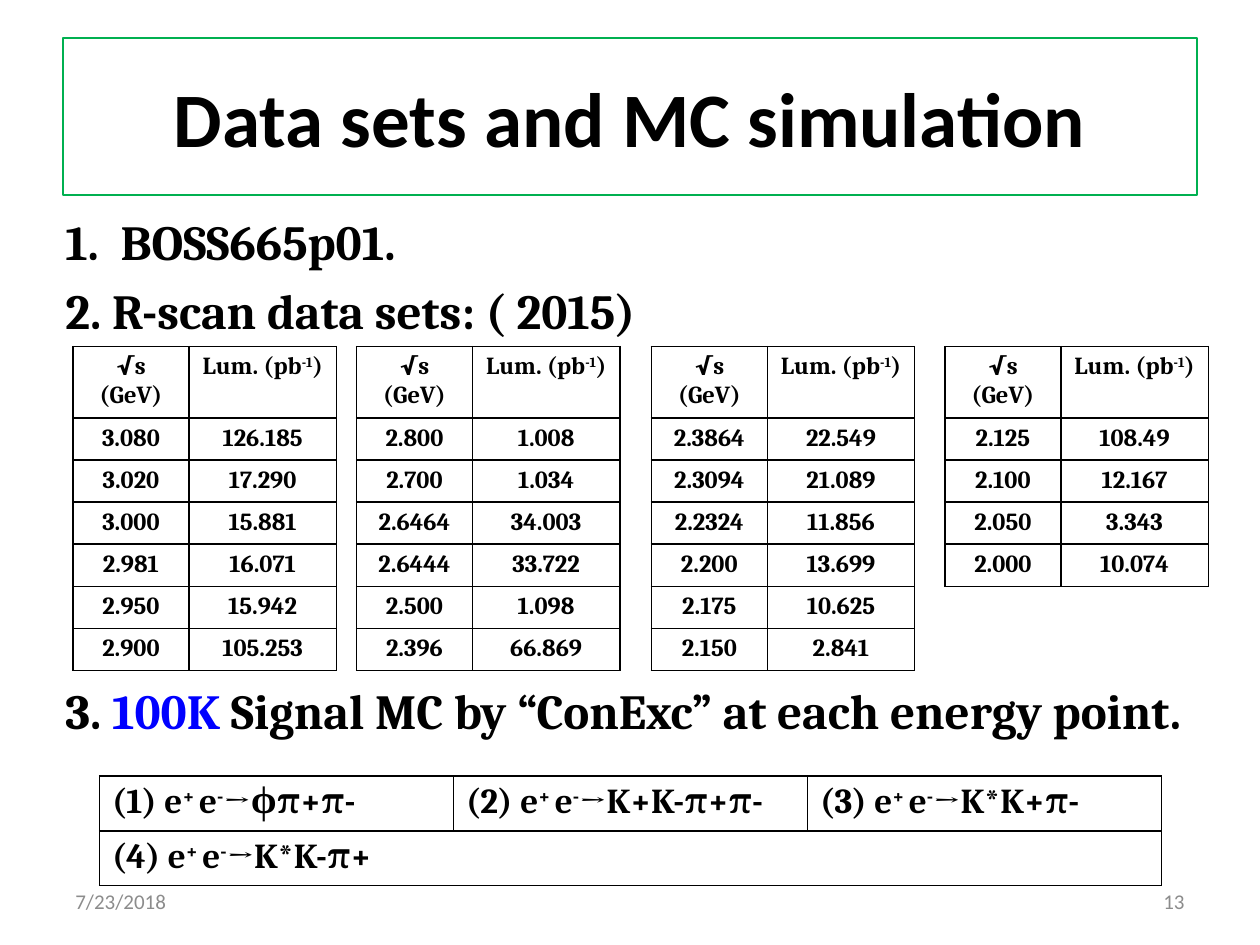
from lxml import etree
from pptx import Presentation, util as u
from pptx.dml.color import RGBColor
from pptx.enum import shapes, text
from pptx.oxml.ns import qn

HUES = {"ink": "000000", "edge": "00B050", "blue": "0000FF", "gray": "8C8C8C"}
TITLE = "Data sets and MC simulation"
POINTS = [
    (5.6, [("1.  BOSS665p01.", "ink")]),
    (5.6, [("2. R-scan data sets: ( 2015)", "ink")]),
    (195, [("3. ", "ink"), ("100K", "blue"),
           (" Signal MC by “ConExc” at each energy point.", "ink")]),
]
HEADS = [[("√s (GeV)", 0)], [("Lum. (pb", 0), ("-1", 30), (")", 0)]]
SCANS = [
    (0.58, [("3.080", "126.185"), ("3.020", "17.290"), ("3.000", "15.881"),
            ("2.981", "16.071"), ("2.950", "15.942"), ("2.900", "105.253")]),
    (2.83, [("2.800", "1.008"), ("2.700", "1.034"), ("2.6464", "34.003"),
            ("2.6444", "33.722"), ("2.500", "1.098"), ("2.396", "66.869")]),
    (5.17, [("2.3864", "22.549"), ("2.3094", "21.089"), ("2.2324", "11.856"),
            ("2.200", "13.699"), ("2.175", "10.625"), ("2.150", "2.841")]),
    (7.5, [("2.125", "108.49"), ("2.100", "12.167"), ("2.050", "3.343"),
           ("2.000", "10.074")]),
]
MODES = ["ϕπ+π-", "K+K-π+π-", "K*K+π-", "K*K-π+"]
FEET = [(7.17, "13", "RIGHT"), (0.5, "7/23/2018", "LEFT")]


def add_run(para, words, size, face="Cambria", hue="ink", bold=True, base=0):
    run = para.add_run()
    run.text = words
    font = run.font
    font.size, font.name, font.bold = u.Pt(size), face, bold
    font.color.rgb = RGBColor.from_string(HUES[hue])
    if base:
        run._r.get_or_add_rPr().set("baseline", str(base * 1000))


def add_box(slide, *place):
    frame = slide.shapes.add_textbox(*map(u.Inches, place)).text_frame
    frame.word_wrap = True
    return frame


def add_edges(cell):
    cell.fill.background()
    props = cell._tc.get_or_add_tcPr()
    for i, side in enumerate(("lnL", "lnR", "lnT", "lnB")):
        line = etree.Element(qn("a:" + side), w=str(u.Pt(1)))
        fill = etree.SubElement(line, qn("a:solidFill"))
        etree.SubElement(fill, qn("a:srgbClr"), val=HUES["ink"])
        props.insert(i, line)


def add_grid(slide, rows, left, top, cols, high, tall, size, align):
    shape = slide.shapes.add_table(
        len(rows), len(cols), u.Inches(left), u.Inches(top),
        u.Inches(sum(cols)), u.Inches(tall))
    table = shape.table
    table.first_row = table.horz_banding = False
    for col, wide in zip(table.columns, cols):
        col.width = u.Inches(wide)
    for r, row in enumerate(rows):
        table.rows[r].height = u.Inches(high)
        for c in range(len(cols)):
            cell = table.cell(r, c)
            add_edges(cell)
            if c < len(row):
                para = cell.text_frame.paragraphs[0]
                para.alignment = align
                for words, base in row[c]:
                    add_run(para, words, size, base=base)
    shape.height = u.Inches(tall)
    return table


def main():
    deck = Presentation()
    deck.slide_width, deck.slide_height = u.Inches(10), u.Inches(7.5)
    slide = deck.slides.add_slide(deck.slide_layouts[6])
    align = text.PP_ALIGN

    title = slide.shapes.add_shape(
        shapes.MSO_SHAPE.RECTANGLE, *map(u.Inches, (0.5, 0.3, 9, 1.25)))
    title.shadow.inherit = False
    title.fill.background()
    title.line.color.rgb = RGBColor.from_string(HUES["edge"])
    title.line.width = u.Pt(1.25)
    title.text_frame.word_wrap = True
    title.text_frame.vertical_anchor = text.MSO_ANCHOR.MIDDLE
    para = title.text_frame.paragraphs[0]
    para.alignment = align.CENTER
    add_run(para, TITLE, 44, "Calibri")

    body = add_box(slide, 0.42, 1.63, 9.17, 5.37)
    for i, (gap, runs) in enumerate(POINTS):
        para = body.add_paragraph() if i else body.paragraphs[0]
        para.space_before = u.Pt(gap)
        props = para._p.get_or_add_pPr()
        props.set("marL", str(u.Inches(0.38)))
        props.set("indent", str(u.Inches(-0.38)))
        for words, hue in runs:
            add_run(para, words, 28, hue=hue)

    for left, data in SCANS:
        rows = [HEADS] + [[[(val, 0)] for val in pair] for pair in data]
        add_grid(slide, rows, left, 2.75, (0.92, 1.17), 0.25,
                 len(rows) / 3, 14, align.CENTER)

    cells = [[(f"({n}) e", 0), ("+ ", 30), ("e", 0), ("-", 30), ("→" + mode, 0)]
             for n, mode in enumerate(MODES, 1)]
    table = add_grid(slide, [cells[:3], cells[3:]], 0.79, 6.16, [2.81] * 3,
                     0.41, 0.87, 20, align.LEFT)
    table.cell(1, 0).merge(table.cell(1, 2))

    for left, words, side in FEET:
        foot = add_box(slide, left, 6.95, 2.33, 0.4)
        foot.vertical_anchor = text.MSO_ANCHOR.MIDDLE
        para = foot.paragraphs[0]
        para.alignment = align[side]
        add_run(para, words, 12, "Calibri", "gray", False)

    deck.save("out.pptx")


if __name__ == "__main__":
    main()
